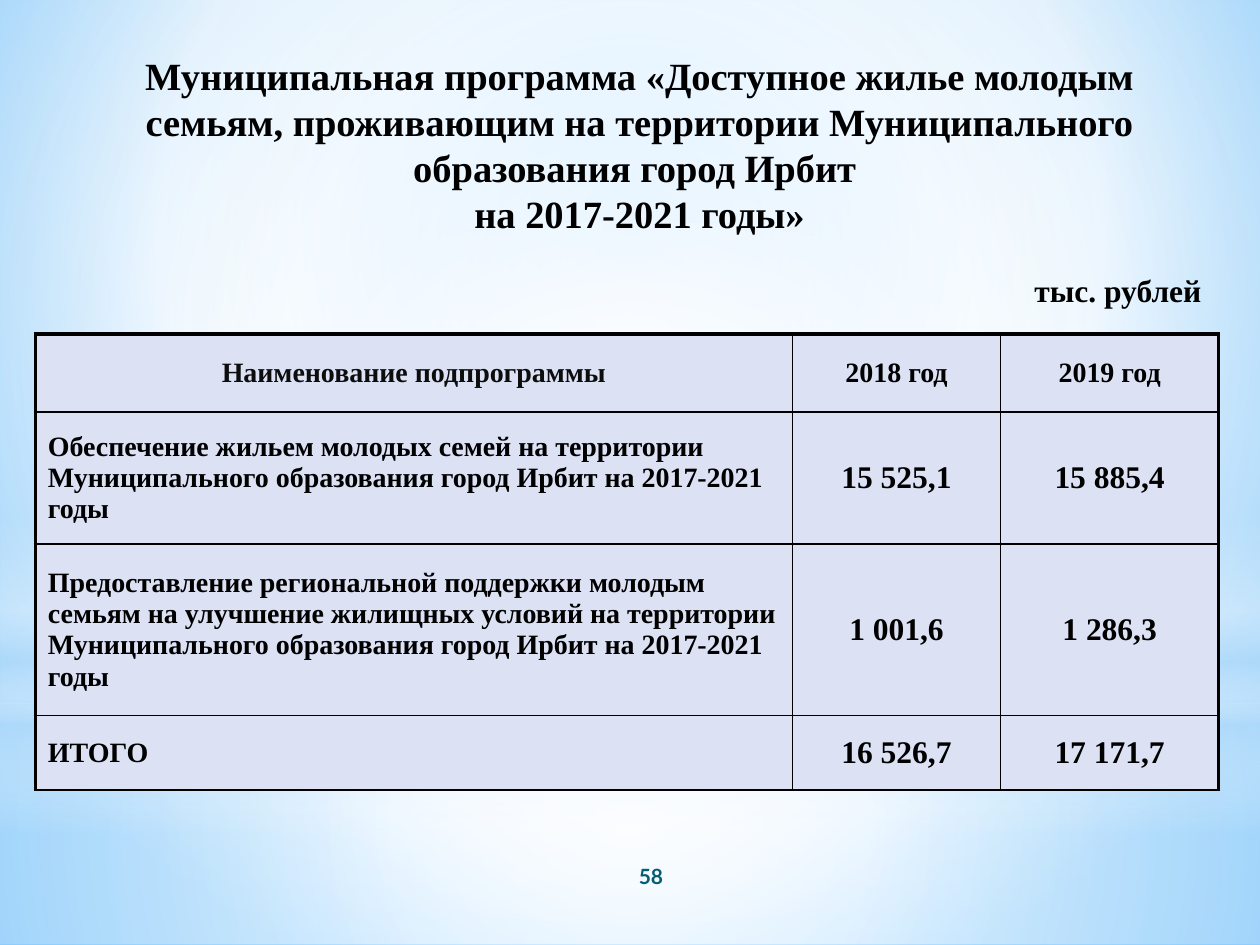
import pptx
import pptx.util
import pptx.oxml
import pptx.oxml.ns
import pptx.dml.color
import pptx.enum.shapes
import pptx.enum.text
from dataclasses import dataclass

Pt = pptx.util.Pt
qn = pptx.oxml.ns.qn
RGB = pptx.dml.color.RGBColor.from_string
SHAPE = pptx.enum.shapes.MSO_SHAPE
ALIGN = pptx.enum.text.PP_ALIGN
ANCHOR = pptx.enum.text.MSO_ANCHOR
FIT = pptx.enum.text.MSO_AUTO_SIZE


@dataclass(frozen=True)
class Theme:
    serif: str = "Times New Roman"
    sans: str = "Lato"
    text: str = "000000"
    header: str = "0D0D0D"
    number: str = "045D75"
    cell: str = "DCE1F4"
    white: str = "FFFFFF"
    haze: str = "B4DCFA"
    sky: str = "9ED5FF"
    deep_sky: str = "5BB9FF"
    title_size: float = 22
    value_size: float = 18
    label_size: float = 16
    number_size: float = 12
    thin: float = 1
    thick: float = 2.25


class Deck:
    def __init__(self, theme):
        self.theme = theme
        self.prs = pptx.Presentation()
        self.prs.slide_width, self.prs.slide_height = Pt(720), Pt(540)
        self.s = self.prs.slides.add_slide(self.prs.slide_layouts[5])

    def font(self, p, size, color=None, name=None, align=ALIGN.CENTER):
        p.alignment = align
        p.font.name = name or self.theme.serif
        p.font.size = Pt(size)
        p.font.bold = True
        p.font.color.rgb = RGB(color or self.theme.text)

    def gradient(self, holder, stops, to=None):
        """Swap the solid fill for stops of (position, colour, opacity)."""
        gs = "".join(
            f'<a:gs pos="{pos * 1000}"><a:srgbClr val="{color}">'
            f'<a:alpha val="{alpha * 1000}"/></a:srgbClr></a:gs>'
            for pos, color, alpha in stops)
        if to:
            sides = " ".join(f'{k}="{v * 1000}"' for k, v in zip("ltrb", to))
            shade = f'<a:path path="circle"><a:fillToRect {sides}/></a:path>'
        else:
            shade = '<a:lin ang="5400000" scaled="0"/>'
        fill = pptx.oxml.parse_xml(
            f'<a:gradFill {pptx.oxml.ns.nsdecls("a")} rotWithShape="1">'
            f'<a:gsLst>{gs}</a:gsLst>{shade}</a:gradFill>')
        holder.replace(holder.find(qn("a:solidFill")), fill)

    def background(self, stops, to):
        self.s.background.fill.solid()
        self.gradient(self.s.element.find(".//" + qn("p:bgPr")), stops, to)

    def glow(self, kind, top, height, stops, to=None):
        sp = self.s.shapes.add_shape(kind, 0, Pt(top), self.prs.slide_width, Pt(height))
        sp.shadow.inherit = False
        sp.line.fill.background()
        sp.fill.solid()
        self.gradient(sp.element.spPr, stops, to)

    def title(self, box, lines):
        sp = self.s.shapes.title
        sp.element.getparent().append(sp.element)  # in front of the glows
        sp.left, sp.top, sp.width, sp.height = map(Pt, box)
        tf = sp.text_frame
        tf.text = "\n".join(lines)
        tf.word_wrap = True
        tf.auto_size = FIT.SHAPE_TO_FIT_TEXT
        tf.vertical_anchor = ANCHOR.TOP
        for p in tf.paragraphs:
            self.font(p, self.theme.title_size)

    def text(self, box, words, size, wrap=True, anchor=ANCHOR.TOP, **style):
        tf = self.s.shapes.add_textbox(*map(Pt, box)).text_frame
        tf.text = words
        tf.word_wrap = wrap
        tf.vertical_anchor = anchor
        self.font(tf.paragraphs[0], size, **style)

    def borders(self, cell, widths):
        tc_pr = cell._tc.get_or_add_tcPr()
        for i, (side, width) in enumerate(zip("LRTB", widths)):
            tc_pr.insert(i, pptx.oxml.parse_xml(
                f'<a:ln{side} {pptx.oxml.ns.nsdecls("a")} w="{Pt(width)}">'
                f'<a:solidFill><a:srgbClr val="{self.theme.text}"/></a:solidFill>'
                f'</a:ln{side}>'))

    def table(self, left, top, cols, heights, rows):
        t = self.theme
        table = self.s.shapes.add_table(
            len(rows), len(cols), Pt(left), Pt(top), Pt(sum(cols)), Pt(sum(heights))).table
        table.first_row = table.horz_banding = False
        for column, width in zip(table.columns, cols):
            column.width = Pt(width)
        for r, (row, height) in enumerate(zip(rows, heights)):
            table.rows[r].height = Pt(height)
            for c, words in enumerate(row):
                cell = table.cell(r, c)
                cell.text = words
                cell.vertical_anchor = ANCHOR.MIDDLE
                cell.fill.solid()
                cell.fill.fore_color.rgb = RGB(t.cell)
                # Heavy frame on the left, right and top
                heavy = (c == 0, c == len(cols) - 1, r == 0, False)
                self.borders(cell, [t.thick if h else t.thin for h in heavy])
                self.font(cell.text_frame.paragraphs[0],
                          t.value_size if r and c else t.label_size,
                          t.text if r or c else t.header,
                          align=ALIGN.LEFT if r and not c else ALIGN.CENTER)


def main():
    t = Theme()
    deck = Deck(t)
    center = (50, 50, 50, 50)

    # Sky backdrop
    deck.background([(0, t.sky, 100), (60, t.white, 100), (100, t.deep_sky, 100)],
                    (20, 10, 20, 60))
    deck.glow(SHAPE.RECTANGLE, 402, 138,
              [(0, t.white, 91), (37, t.white, 76), (100, t.haze, 79)], center)
    deck.glow(SHAPE.RECTANGLE, 0, 402,
              [(0, t.white, 89), (48, t.white, 62), (100, t.haze, 79)], center)
    deck.glow(SHAPE.RECTANGLE, 297, 180,
              [(0, t.white, 0), (29, t.white, 30), (45, t.haze, 40),
               (55, t.white, 26), (65, t.haze, 60), (100, t.white, 0)])
    deck.glow(SHAPE.OVAL, 126, 402, [(0, t.white, 100), (56, t.white, 0)], center)

    # Slide number and title
    deck.text((300, 486, 144, 29), "58", t.number_size, anchor=ANCHOR.MIDDLE,
              color=t.number, name=t.sans)
    deck.title((36.7, 26, 657.4, 113.6), [
        "Муниципальная программа «Доступное жилье молодым семьям, проживающим "
        "на территории Муниципального образования город Ирбит ",
        "на 2017-2021 годы»"])

    # Subprogramme costs
    deck.table(20.2, 190.8, (432.6, 119, 124.6), (44.6, 75.6, 98, 42.5), [
        ("Наименование подпрограммы", "2018 год", "2019 год"),
        ("Обеспечение жильем молодых семей на территории Муниципального "
         "образования город Ирбит на 2017-2021 годы", "15 525,1", "15 885,4"),
        ("Предоставление региональной поддержки молодым семьям на улучшение "
         "жилищных условий на территории Муниципального образования город Ирбит "
         "на 2017-2021 годы", "1 001,6", "1 286,3"),
        ("ИТОГО", "16 526,7", "17 171,7")])
    deck.text((584, 151.2, 110.8, 29), "тыс. рублей", t.value_size, wrap=False,
              align=ALIGN.LEFT)

    deck.prs.save("out.pptx")


if __name__ == "__main__":
    main()
